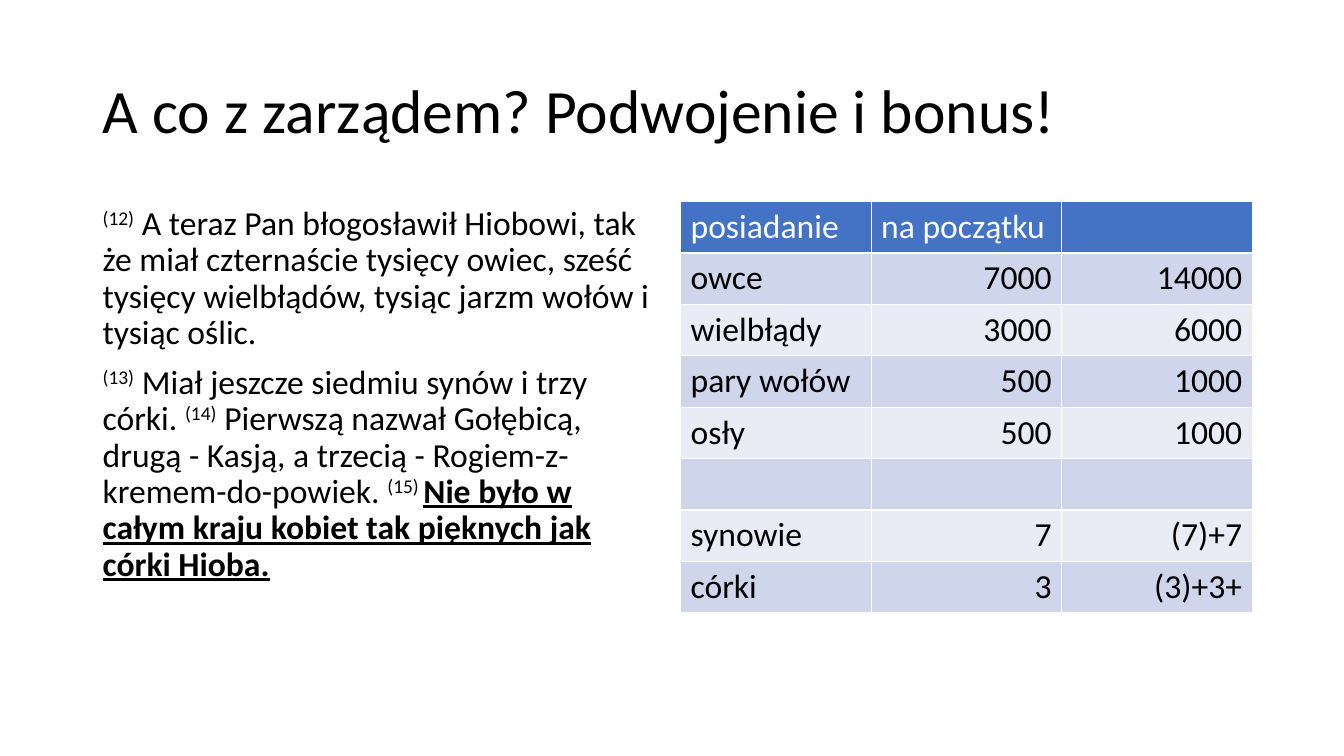
"""Build a slide with a title, a passage of verses and a table of possessions."""
import pptx
import pptx.dml.color
import pptx.enum.text
import pptx.util

Inches = pptx.util.Inches
Pt = pptx.util.Pt
RGB = pptx.dml.color.RGBColor
ALIGN = pptx.enum.text.PP_ALIGN
ANCHOR = pptx.enum.text.MSO_ANCHOR

BLACK = RGB(0x00, 0x00, 0x00)
WHITE = RGB(0xFF, 0xFF, 0xFF)
BLUE = RGB(0x44, 0x72, 0xC4)
BANDS = [RGB(0xE9, 0xEB, 0xF5), RGB(0xCF, 0xD5, 0xEA)]

TITLE = [[("A co z zarządem? Podwojenie i bonus!", "plain")]]
VERSES = [
    [
        ("(12)", "super"),
        (" A teraz Pan błogosławił Hiobowi, tak że miał czternaście tysięcy owiec, "
         "sześć tysięcy wielbłądów, tysiąc jarzm wołów i tysiąc oślic.", "plain"),
    ],
    [
        ("(13)", "super"),
        (" Miał jeszcze siedmiu synów i trzy córki. ", "plain"),
        ("(14)", "super"),
        (" Pierwszą nazwał Gołębicą, drugą - Kasją, a trzecią - "
         "Rogiem-z-kremem-do-powiek. ", "plain"),
        ("(15) ", "super"),
        ("Nie było w całym kraju kobiet tak pięknych jak córki Hioba.", "strong"),
    ],
]
ROWS = [
    ("posiadanie", "na początku", ""),
    ("owce", "7000", "14000"),
    ("wielbłądy", "3000", "6000"),
    ("pary wołów", "500", "1000"),
    ("osły", "500", "1000"),
    ("", "", ""),
    ("synowie", "7", "(7)+7"),
    ("córki", "3", "(3)+3+"),
]
LEFT, TOP, WIDTH = 0.92, 2, 5.67
TABLE_LEFT = 6.75
ROW_HIGH = 0.51


def add_run(para, text, size, color, style="plain"):
    run = para.add_run()
    run.text = text
    font = run.font
    font.name = "Calibri"
    font.size = Pt(size)
    font.color.rgb = color
    font.bold = style == "strong"
    font.underline = style == "strong"
    if style == "super":
        run._r.get_or_add_rPr().set("baseline", "30000")


def add_text(slide, box, paras, size, before, anchor):
    frame = slide.shapes.add_textbox(*map(Inches, box)).text_frame
    frame.word_wrap = True
    frame.vertical_anchor = anchor
    for i, runs in enumerate(paras):
        para = frame.add_paragraph() if i else frame.paragraphs[0]
        para.line_spacing = 0.9
        para.space_before = Pt(before)
        for text, style in runs:
            add_run(para, text, size, BLACK, style)


def add_grid(slide):
    count = len(ROWS[0])
    box = (TABLE_LEFT, TOP, WIDTH, ROW_HIGH * len(ROWS))
    table = slide.shapes.add_table(len(ROWS), count, *map(Inches, box)).table
    for col in table.columns:
        col.width = Inches(WIDTH / count)
    for r, row in enumerate(ROWS):
        for c, text in enumerate(row):
            cell = table.cell(r, c)
            cell.fill.solid()
            cell.fill.fore_color.rgb = BANDS[r % 2] if r else BLUE
            para = cell.text_frame.paragraphs[0]
            if r and c:
                para.alignment = ALIGN.RIGHT
            if text:
                add_run(para, text, 24, BLACK if r else WHITE)


def main():
    deck = pptx.Presentation()
    deck.slide_width = Inches(13.33)
    deck.slide_height = Inches(7.5)
    slide = deck.slides.add_slide(deck.slide_layouts[6])
    add_text(slide, (LEFT, 0.4, 11.5, 1.45), TITLE, 44, 0, ANCHOR.MIDDLE)
    add_text(slide, (LEFT, TOP, WIDTH, 4.76), VERSES, 24, 10, ANCHOR.TOP)
    add_grid(slide)
    deck.save("out.pptx")


if __name__ == "__main__":
    main()
